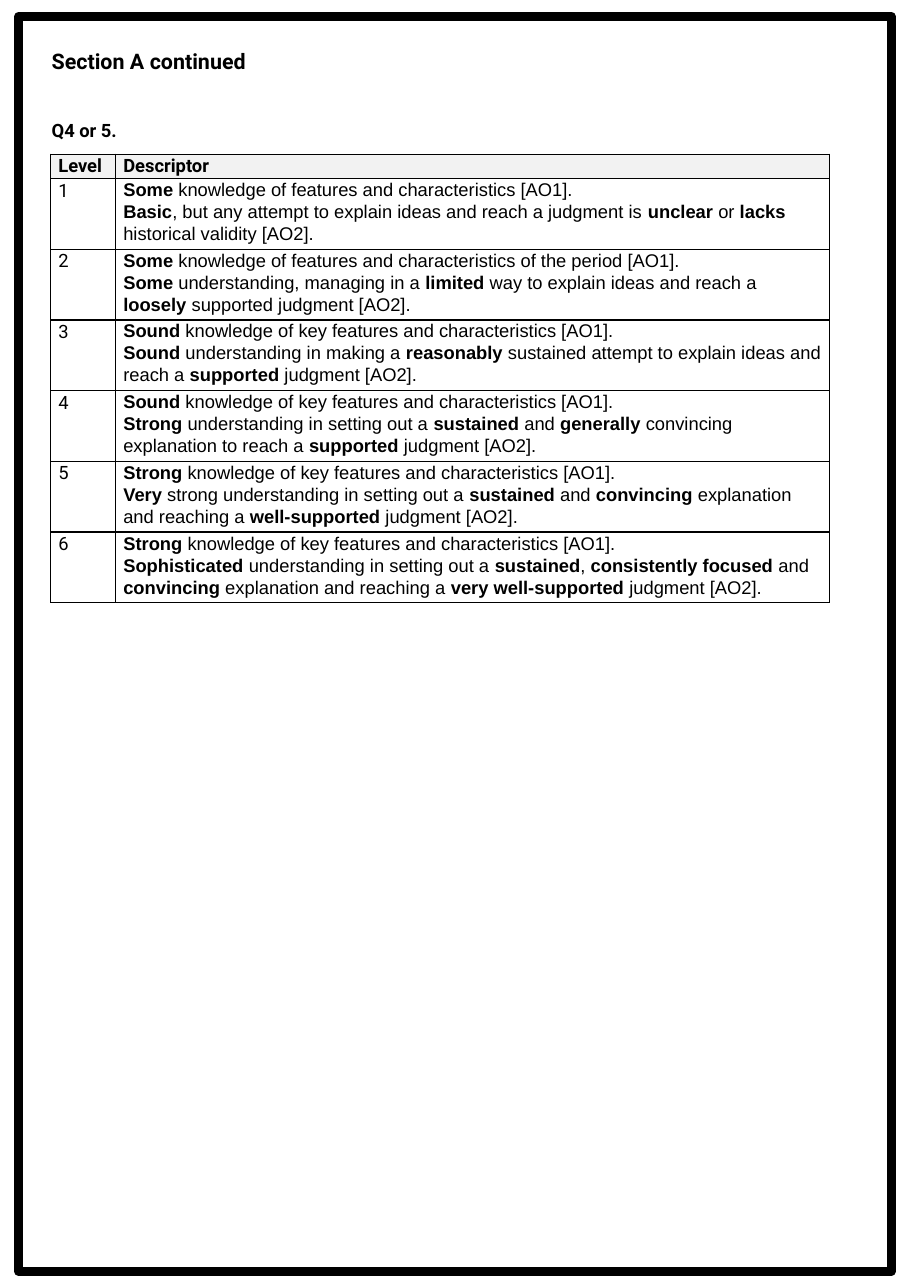
from dataclasses import dataclass

import pptx
import pptx.dml.color
import pptx.enum.shapes
import pptx.oxml
import pptx.oxml.ns
import pptx.util
from pptx.util import Inches

BLACK, WHITE, HEADER_GREY = "000000", "FFFFFF", "F2F2F2"


@dataclass
class Level:
    number: int
    knowledge: str
    understanding: str


# Words between double asterisks are bold.
LEVELS = [
    Level(1, "**Some** knowledge of features and characteristics [AO1].",
          "**Basic**, but any attempt to explain ideas and reach a judgment is "
          "**unclear** or **lacks** historical validity [AO2]."),
    Level(2, "**Some** knowledge of features and characteristics of the period [AO1].",
          "**Some** understanding, managing in a **limited** way to explain ideas "
          "and reach a **loosely** supported judgment [AO2]."),
    Level(3, "**Sound** knowledge of key features and characteristics [AO1].",
          "**Sound** understanding in making a **reasonably** sustained attempt to "
          "explain ideas and reach a **supported** judgment [AO2]."),
    Level(4, "**Sound** knowledge of key features and characteristics [AO1].",
          "**Strong** understanding in setting out a **sustained** and **generally** "
          "convincing explanation to reach a **supported** judgment [AO2]."),
    Level(5, "**Strong** knowledge of key features and characteristics [AO1].",
          "**Very** strong understanding in setting out a **sustained** and "
          "**convincing** explanation and reaching a **well-supported** judgment [AO2]."),
    Level(6, "**Strong** knowledge of key features and characteristics [AO1].",
          "**Sophisticated** understanding in setting out a **sustained**, "
          "**consistently focused** and **convincing** explanation and reaching a "
          "**very well-supported** judgment [AO2]."),
]


def colour(value: str) -> pptx.dml.color.RGBColor:
    return pptx.dml.color.RGBColor.from_string(value)


def write_paragraph(para, text: str, font: str, size: float = 12) -> None:
    """Fill a paragraph, turning the parts between ** into bold runs."""
    para.font.name = font
    para.font.size = pptx.util.Pt(size)
    para.font.color.rgb = colour(BLACK)
    for position, part in enumerate(text.split("**")):
        if part:
            span = para.add_run()
            span.text = part
            span.font.bold = position % 2 == 1


def draw_borders(cell) -> None:
    properties = cell._tc.get_or_add_tcPr()
    for side in ("lnL", "lnR", "lnT", "lnB"):
        properties.append(pptx.oxml.parse_xml(
            f'<a:{side} {pptx.oxml.ns.nsdecls("a")} w="12700"><a:solidFill>'
            f'<a:srgbClr val="{BLACK}"/></a:solidFill></a:{side}>'))


def fill_cell(cell, lines: list[str], font: str, fill: str = WHITE) -> None:
    draw_borders(cell)
    cell.fill.solid()
    cell.fill.fore_color.rgb = colour(fill)
    cell.margin_left = cell.margin_right = Inches(0.07)
    cell.margin_top = cell.margin_bottom = 0
    for position, line in enumerate(lines):
        frame = cell.text_frame
        para = frame.add_paragraph() if position else frame.paragraphs[0]
        para.line_spacing = 1.07
        write_paragraph(para, line, font)


def add_page_frame(page) -> None:
    border = page.shapes.add_shape(
        pptx.enum.shapes.MSO_SHAPE.RECTANGLE,
        Inches(0.17), Inches(0.15), Inches(7.92), Inches(11.39))
    border.shadow.inherit = False
    border.fill.solid()
    border.fill.fore_color.rgb = colour(WHITE)
    border.line.color.rgb = colour(BLACK)
    border.line.width = pptx.util.Pt(6)
    border.line._get_or_add_ln().append(
        pptx.oxml.parse_xml(f'<a:round {pptx.oxml.ns.nsdecls("a")}/>'))


def add_headings(page) -> None:
    box = page.shapes.add_textbox(Inches(0.37), Inches(0.34), Inches(7.52), Inches(8.9))
    frame = box.text_frame
    frame.word_wrap = True
    frame.margin_left = frame.margin_right = Inches(0.1)
    frame.margin_top = frame.margin_bottom = Inches(0.1)
    write_paragraph(frame.paragraphs[0], "**Section A continued**", "Roboto", 14)
    question = frame.add_paragraph()
    question.space_before = pptx.util.Pt(29.5)
    write_paragraph(question, "**Q4 or 5.**", "Roboto")


def add_level_table(page) -> None:
    widths = (0.59, 6.48)
    header_height, level_height = 0.22, 0.64
    table = page.shapes.add_table(
        len(LEVELS) + 1, len(widths), Inches(0.46), Inches(1.4), Inches(sum(widths)),
        Inches(header_height + level_height * len(LEVELS))).table
    table.first_row = table.horz_banding = False
    for column, width in zip(table.columns, widths):
        column.width = Inches(width)
    table.rows[0].height = Inches(header_height)
    for column, title in enumerate(("Level", "Descriptor")):
        fill_cell(table.cell(0, column), [f"**{title}**"], "Roboto", HEADER_GREY)
    for row, level in enumerate(LEVELS, start=1):
        table.rows[row].height = Inches(level_height)
        fill_cell(table.cell(row, 0), [str(level.number)], "Roboto")
        fill_cell(table.cell(row, 1), [level.knowledge, level.understanding], "Arial")


def main() -> None:
    deck = pptx.Presentation()
    deck.slide_width, deck.slide_height = Inches(8.27), Inches(11.69)
    page = deck.slides.add_slide(deck.slide_layouts[6])
    add_page_frame(page)
    add_headings(page)
    add_level_table(page)
    deck.save("out.pptx")


if __name__ == "__main__":
    main()
